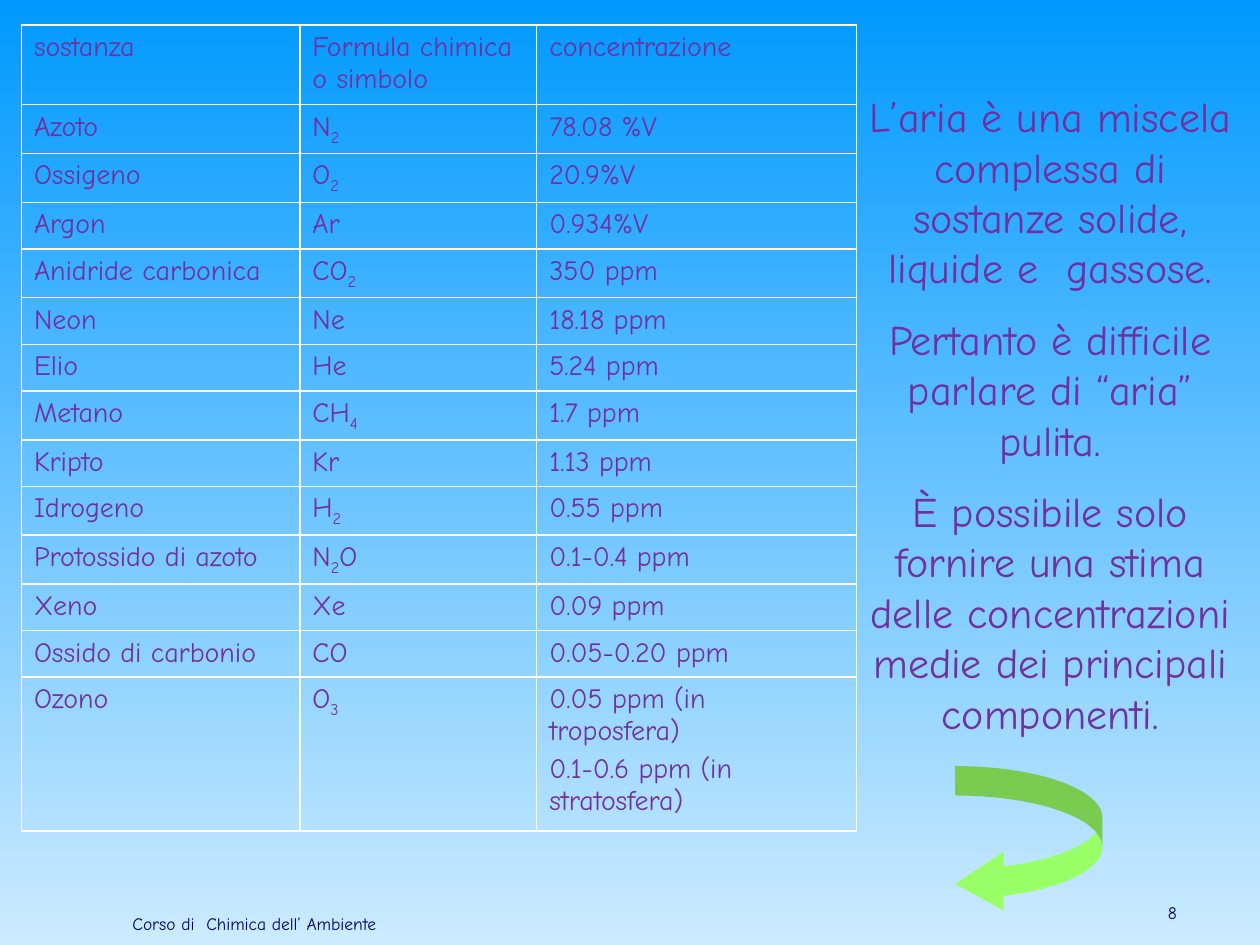
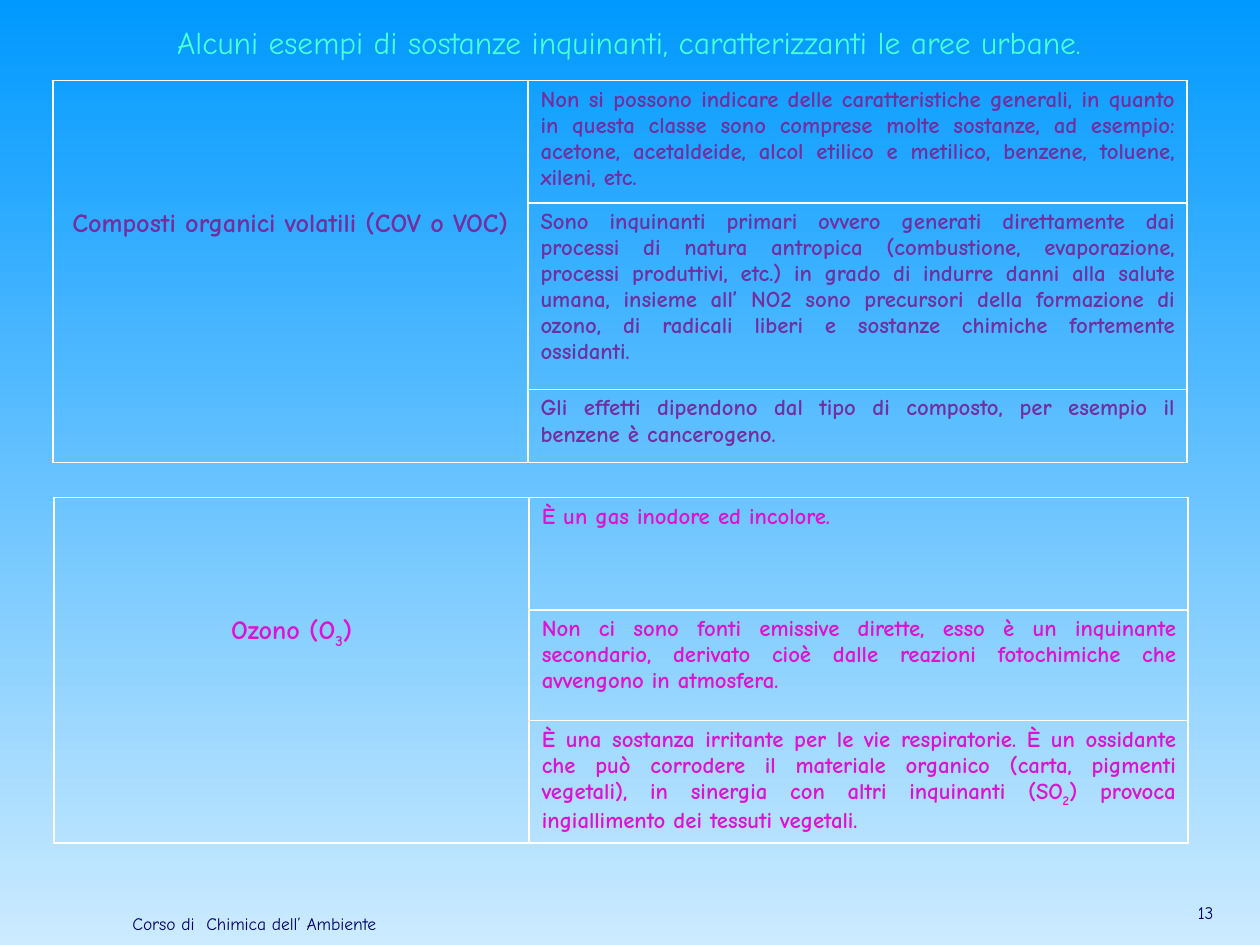
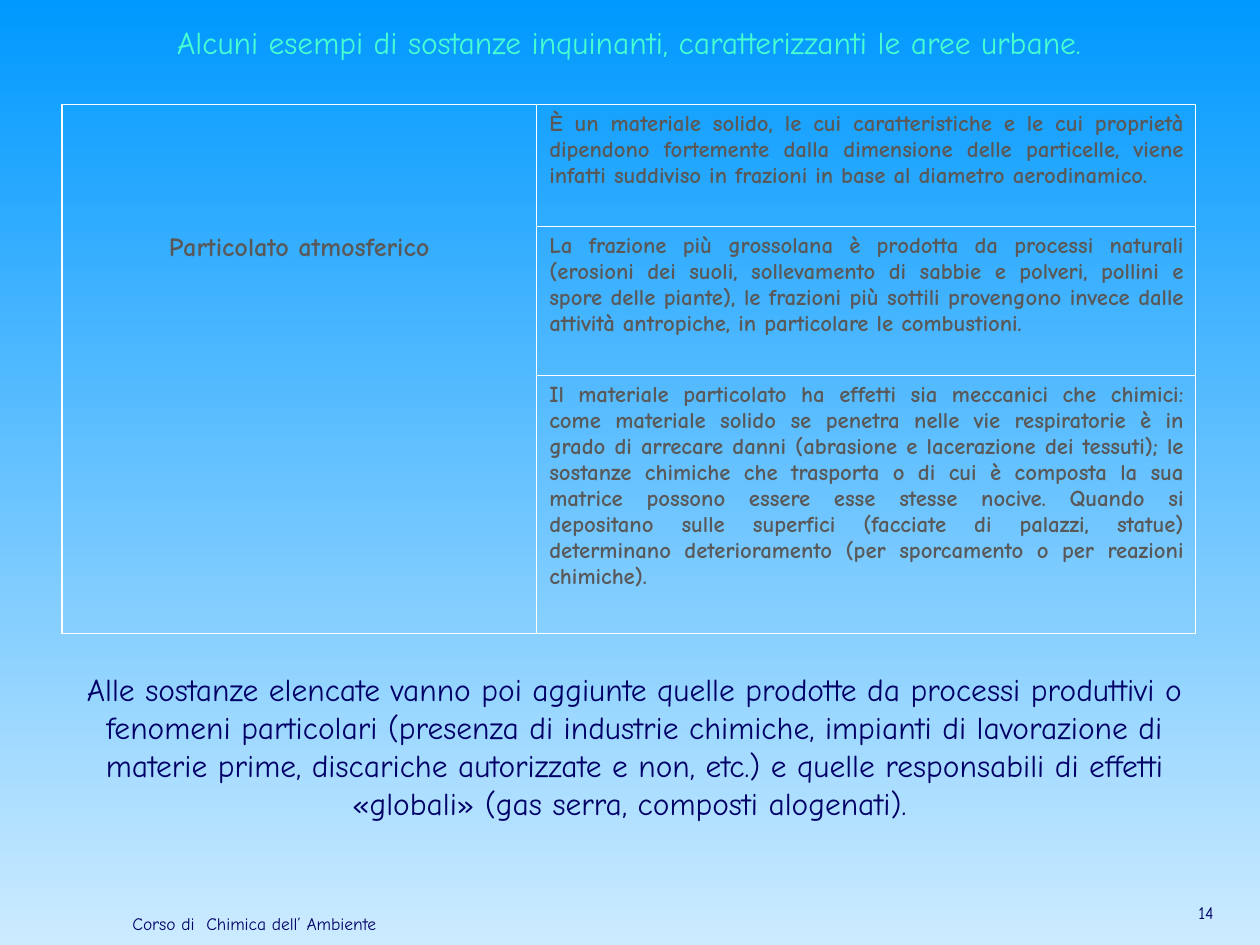
from lxml import etree
from pptx import Presentation
from pptx.dml.color import RGBColor
from pptx.enum.shapes import MSO_SHAPE
from pptx.enum.text import MSO_ANCHOR, MSO_AUTO_SIZE, PP_ALIGN
from pptx.oxml.ns import qn
from pptx.util import Pt

EMU_PER_PX = 9144  # 100 px to the inch
FONT = "Comic Neue"
LEFT, CENTER, RIGHT, JUSTIFY = PP_ALIGN.LEFT, PP_ALIGN.CENTER, PP_ALIGN.RIGHT, PP_ALIGN.JUSTIFY
TOP = MSO_ANCHOR.TOP
NO_AUTOFIT = MSO_AUTO_SIZE.NONE
CURVED_ARROW = MSO_SHAPE.CURVED_LEFT_ARROW
CONTENT_LAYOUT, TITLE_LAYOUT = 1, 5

COLORS = {
    "sky_top": "0099FF", "sky_bottom": "CCEBFF", "title": "47FFD1", "navy": "000066",
    "purple": "7030A0", "magenta": "DD13D3", "gray": "595959", "arrow": "99FF66", "border": "FFFFFF",
}

FOOTER = "Corso di  Chimica dell’ Ambiente "
TITLE = "Alcuni esempi di sostanze inquinanti, caratterizzanti le aree urbane. "

# Text between tildes is set as a subscript.
AIR_ROWS = [
    ("sostanza", "Formula chimica o simbolo", "concentrazione"),
    ("Azoto", "N~2~", "78.08 %V"),
    ("Ossigeno", "O~2~", "20.9%V"),
    ("Argon", "Ar", "0.934%V"),
    ("Anidride carbonica", "CO~2~", "350 ppm"),
    ("Neon", "Ne", "18.18 ppm"),
    ("Elio", "He", "5.24 ppm"),
    ("Metano", "CH~4~", "1.7 ppm"),
    ("Kripto", "Kr", "1.13 ppm"),
    ("Idrogeno", "H~2~", "0.55 ppm"),
    ("Protossido di azoto", "N~2~O", "0.1-0.4 ppm"),
    ("Xeno", "Xe", "0.09 ppm"),
    ("Ossido di carbonio", "CO", "0.05-0.20 ppm"),
    ("Ozono", "O~3~", "0.05 ppm (in troposfera)\n0.1-0.6 ppm (in stratosfera)"),
]
AIR_NOTES = (
    "L’aria è una miscela complessa di sostanze solide, liquide e  gassose.\n"
    "Pertanto è difficile parlare di “aria” pulita.\n"
    "È possibile solo fornire una stima delle concentrazioni medie dei principali componenti."
)
VOC_FACTS = [
    "Non si possono indicare delle caratteristiche generali, in quanto in questa classe sono comprese "
    "molte sostanze, ad esempio: acetone, acetaldeide, alcol etilico e metilico, benzene, toluene, "
    "xileni, etc.",
    "Sono inquinanti primari ovvero generati direttamente dai processi di natura antropica "
    "(combustione, evaporazione, processi produttivi, etc.) in grado di indurre danni alla salute "
    "umana, insieme all’ NO2 sono precursori della formazione di ozono, di radicali liberi e sostanze "
    "chimiche fortemente ossidanti.",
    "Gli effetti dipendono dal tipo di composto, per esempio il benzene è cancerogeno.",
]
OZONE_FACTS = [
    "È un gas inodore ed incolore.",
    "Non ci sono fonti emissive dirette, esso è un inquinante secondario, derivato cioè dalle reazioni "
    "fotochimiche che avvengono in atmosfera.",
    "È una sostanza irritante per le vie respiratorie. È un ossidante che può corrodere il materiale "
    "organico (carta, pigmenti vegetali), in sinergia con altri inquinanti (SO~2~) provoca "
    "ingiallimento dei tessuti vegetali.",
]
PARTICULATE_FACTS = [
    "È un materiale solido, le cui caratteristiche e le cui proprietà dipendono fortemente dalla "
    "dimensione delle particelle, viene infatti suddiviso in frazioni in base al diametro aerodinamico.",
    "La frazione più grossolana è prodotta da processi naturali (erosioni dei suoli, sollevamento di "
    "sabbie e polveri, pollini e spore delle piante), le frazioni più sottili provengono invece dalle "
    "attività antropiche, in particolare le combustioni.",
    "Il materiale particolato ha effetti sia meccanici che chimici: come materiale solido se penetra "
    "nelle vie respiratorie è in grado di arrecare danni (abrasione e lacerazione dei tessuti); le "
    "sostanze chimiche che trasporta o di cui è composta la sua matrice possono essere esse stesse "
    "nocive. Quando si depositano sulle superfici (facciate di palazzi, statue) determinano "
    "deterioramento (per sporcamento o per reazioni chimiche).",
]
CLOSING = (
    "Alle sostanze elencate vanno poi aggiunte quelle prodotte da processi produttivi o fenomeni "
    "particolari (presenza di industrie chimiche, impianti di lavorazione di materie prime, discariche "
    "autorizzate e non, etc.) e quelle responsabili di effetti «globali» (gas serra, composti alogenati). "
)


def px(*lengths):
    return [length * EMU_PER_PX for length in lengths]


def rgb(name):
    return RGBColor.from_string(COLORS[name])


def write_text(frame, text, *, size, color, align=LEFT, bold=False, gap=0):
    """Fill a frame, one paragraph per line, with gap points between paragraphs."""
    frame.word_wrap = True
    for index, line in enumerate(text.split("\n")):
        paragraph = frame.add_paragraph() if index else frame.paragraphs[0]
        paragraph.alignment = align
        paragraph.space_before = Pt(gap if index else 0)
        for part_index, part in enumerate(line.split("~")):
            if not part:
                continue
            run = paragraph.add_run()
            run.text = part
            run.font.name = FONT
            run.font.size = Pt(size)
            run.font.bold = bold
            run.font.color.rgb = rgb(color)
            if part_index % 2:
                run.font._element.set("baseline", "-25000")


def fill_placeholder(placeholder, box, text, **text_format):
    placeholder.left, placeholder.top, placeholder.width, placeholder.height = px(*box)
    frame = placeholder.text_frame
    frame.auto_size = NO_AUTOFIT
    frame.vertical_anchor = TOP
    write_text(frame, text, **text_format)
    for paragraph in frame.paragraphs:
        properties = paragraph._p.get_or_add_pPr()
        properties.set("marL", "0")
        properties.set("indent", "0")
        etree.SubElement(properties, qn("a:buNone"))


def add_text_box(slide, box, text, **text_format):
    write_text(slide.shapes.add_textbox(*px(*box)).text_frame, text, **text_format)


def add_footer(slide, number, number_width):
    add_text_box(slide, (917, 711, number_width, 34), number, size=10, color="navy", align=RIGHT)
    add_text_box(slide, (50, 720, 308, 34), FOOTER, size=10, color="navy", align=CENTER)


def add_title(slide):
    fill_placeholder(slide.shapes.title, (43, 13, 921, 40), TITLE, size=18, color="title", align=CENTER)


def style_cell(cell, sides="LRTB"):
    """Clear the fill and draw white borders on the named sides only."""
    properties = cell._tc.get_or_add_tcPr()
    for side in "LRTB":
        line = etree.SubElement(properties, qn(f"a:ln{side}"), w=str(Pt(1)))
        if side in sides:
            fill = etree.SubElement(line, qn("a:solidFill"))
            etree.SubElement(fill, qn("a:srgbClr"), val=COLORS["border"])
        else:
            etree.SubElement(line, qn("a:noFill"))
    cell.fill.background()


def add_grid(slide, left, top, column_widths, row_heights):
    box = px(left, top, sum(column_widths), sum(row_heights))
    table = slide.shapes.add_table(len(row_heights), len(column_widths), *box).table
    table.first_row = table.horz_banding = False
    for column, width in zip(table.columns, px(*column_widths)):
        column.width = width
    for row, height in zip(table.rows, px(*row_heights)):
        row.height = height
    return table


def add_air_table(slide, left, top):
    table = add_grid(slide, left, top, [221, 188, 254], [63] + [37] * 12 + [122])
    for row, values in zip(table.rows, AIR_ROWS):
        for cell, value in zip(row.cells, values):
            style_cell(cell)
            write_text(cell.text_frame, value, size=16, color="purple", gap=3)


def add_pollutant_table(slide, left, top, row_heights, name, facts, color):
    """Name one pollutant on the left, beside three stacked facts."""
    table = add_grid(slide, left, top, [377, 523], row_heights)
    for row, sides, fact in zip(table.rows, ("LRT", "LR", "LRB"), facts):
        name_cell, fact_cell = row.cells
        style_cell(name_cell, sides)
        style_cell(fact_cell)
        write_text(fact_cell.text_frame, fact, size=13, color=color, align=JUSTIFY, bold=True)
    write_text(table.cell(1, 0).text_frame, name, size=15, color=color, align=CENTER, bold=True)


def add_curved_arrow(slide, box):
    arrow = slide.shapes.add_shape(CURVED_ARROW, *px(*box))
    for index, value in enumerate((0.2, 0.4, 0.33)):
        arrow.adjustments[index] = value
    arrow.shadow.inherit = False
    arrow.fill.solid()
    arrow.fill.fore_color.rgb = rgb("arrow")
    arrow.line.fill.background()


def paint_background(master):
    fill = master.background.fill
    fill.gradient()
    fill.gradient_angle = 270
    for stop, color in zip(fill.gradient_stops, ("sky_top", "sky_bottom")):
        stop.color.rgb = rgb(color)


def build_air_slide(slide):
    title = slide.shapes.title._element
    title.getparent().remove(title)
    fill_placeholder(slide.placeholders[1], (667, 67, 333, 656), AIR_NOTES,
                     size=24, color="purple", align=CENTER, gap=12)
    add_curved_arrow(slide, (758, 608, 117, 117))
    add_air_table(slide, 17, 20)
    add_footer(slide, "8", 25)


def build_gases_slide(slide):
    add_title(slide)
    add_pollutant_table(slide, 42, 64, [97, 148, 58],
                        "Composti organici volatili (COV o VOC)", VOC_FACTS, "purple")
    add_pollutant_table(slide, 43, 395, [89, 88, 97], "Ozono (O~3~)", OZONE_FACTS, "magenta")
    add_footer(slide, "13", 56)


def build_particulate_slide(slide):
    add_title(slide)
    add_pollutant_table(slide, 49, 83, [97, 118, 205],
                        "Particolato atmosferico", PARTICULATE_FACTS, "gray")
    fill_placeholder(slide.placeholders[1], (50, 527, 907, 131), CLOSING,
                     size=18, color="navy", align=CENTER)
    add_footer(slide, "14", 56)


def main():
    presentation = Presentation()
    presentation.slide_width, presentation.slide_height = px(1000, 750)
    paint_background(presentation.slide_master)
    for build, layout in (
        (build_air_slide, CONTENT_LAYOUT),
        (build_gases_slide, TITLE_LAYOUT),
        (build_particulate_slide, CONTENT_LAYOUT),
    ):
        build(presentation.slides.add_slide(presentation.slide_layouts[layout]))
    presentation.save("out.pptx")


if __name__ == "__main__":
    main()
